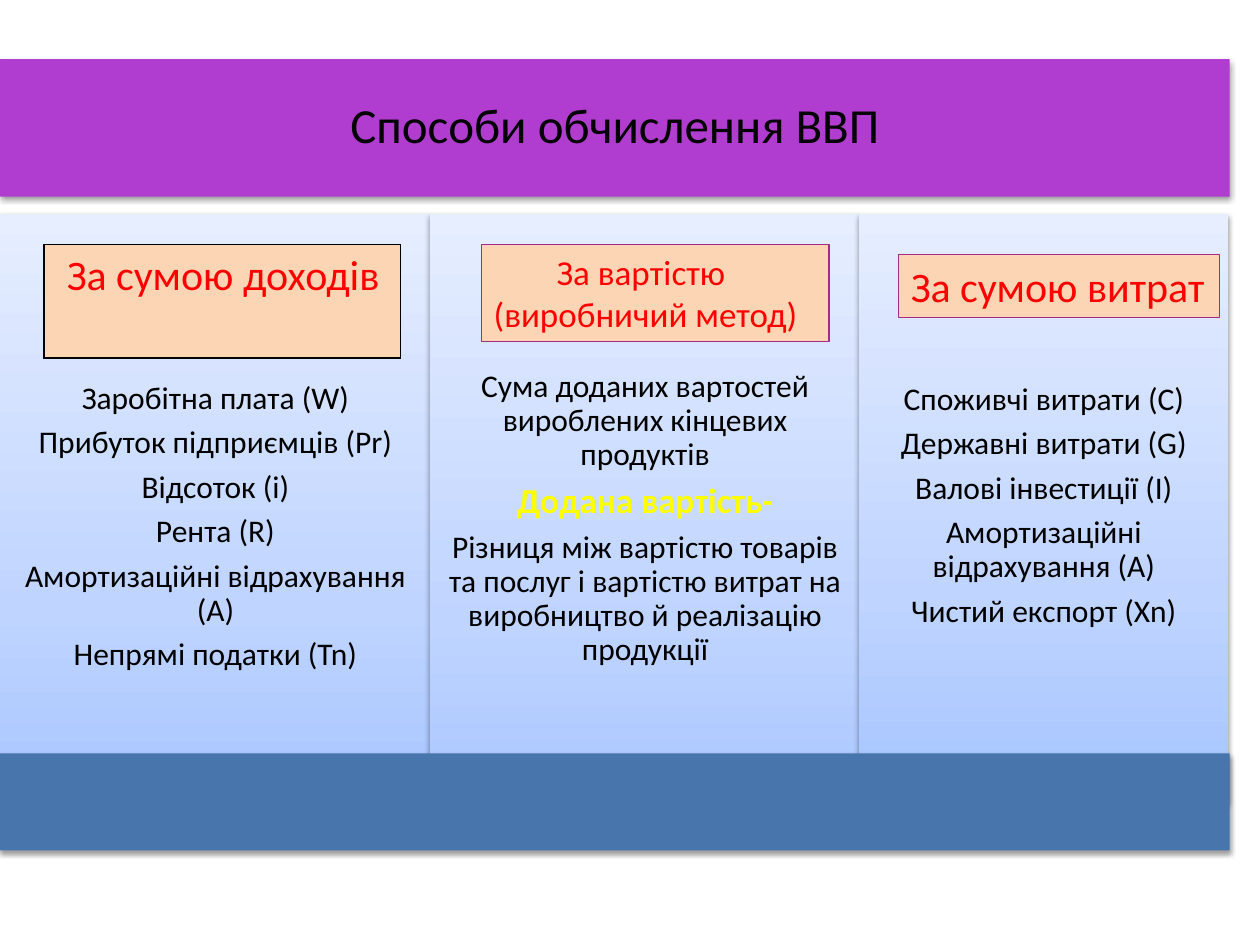
"""Build a slide comparing three ways of calculating GDP."""
import copy
from dataclasses import dataclass

import lxml.etree
import pptx
import pptx.dml.color
import pptx.enum.shapes
import pptx.enum.text
import pptx.oxml.ns
import pptx.util

Inches = pptx.util.Inches
Pt = pptx.util.Pt
RGBColor = pptx.dml.color.RGBColor
PP_ALIGN = pptx.enum.text.PP_ALIGN
ANCHOR = pptx.enum.text.MSO_ANCHOR
AUTO_SIZE = pptx.enum.text.MSO_AUTO_SIZE
RECT = pptx.enum.shapes.MSO_SHAPE.RECTANGLE
qn = pptx.oxml.ns.qn

PURPLE = RGBColor(0xB0, 0x3D, 0xCF)
BLUE = RGBColor(0x48, 0x75, 0xAC)
PEACH = RGBColor(0xFC, 0xD5, 0xB5)
PLUM = RGBColor(0xA5, 0x2B, 0x8B)
RED = RGBColor(0xFF, 0x00, 0x00)
YELLOW = RGBColor(0xFF, 0xFF, 0x00)
BLACK = RGBColor(0x00, 0x00, 0x00)
PANEL_STOPS = (
    (0, RGBColor(0xA4, 0xC4, 0xFF)),
    (0.35, RGBColor(0xBF, 0xD4, 0xFF)),
    (1, RGBColor(0xE6, 0xEE, 0xFF)),
)
KEY_TERM = "Додана вартість-"
BAND_WIDTH = 9.76
PANEL_TOP = 1.7


@dataclass
class Panel:
    left: float
    width: float
    height: float
    inset: float
    text_top: float
    lines: list[str]


@dataclass
class Heading:
    left: float
    top: float
    width: float
    height: float
    text: str
    size: int
    indent: float = 0


PANELS = [
    Panel(0, 3.42, 4.83, 0.1, 1.33, [
        "Заробітна плата (W)", "Прибуток підприємців (Pr)", "Відсоток (i)",
        "Рента (R)", "Амортизаційні відрахування (A)", "Непрямі податки (Tn)"]),
    Panel(3.41, 3.42, 4.98, 0.05, 1.24, [
        "Сума доданих вартостей вироблених кінцевих продуктів", KEY_TERM,
        "Різниця між вартістю товарів та послуг і вартістю витрат на "
        "виробництво й реалізацію продукції"]),
    Panel(6.82, 2.93, 4.67, 0.07, 1.34, [
        "Споживчі витрати (C)", "Державні витрати (G)", "Валові інвестиції (I)",
        "Амортизаційні відрахування (A)", "Чистий експорт (Xn)"]),
]
HEADINGS = [
    Heading(7.13, 2.02, 2.55, 0.5, "За сумою витрат", 24),
    Heading(3.82, 1.94, 2.76, 0.77, "За вартістю (виробничий метод)", 20, 0.5),
]


def place(sp, left: float, top: float, width: float, height: float) -> None:
    sp.left, sp.top = Inches(left), Inches(top)
    sp.width, sp.height = Inches(width), Inches(height)


def solid(fill, color: RGBColor) -> None:
    fill.solid()
    fill.fore_color.rgb = color


def style(p, size: int, color: RGBColor, bold: bool = False) -> None:
    for r in p.runs:
        r.font.name = "Calibri"
        r.font.size = Pt(size)
        r.font.color.rgb = color
        r.font.bold = bold


def set_margins(tf, inset: float) -> None:
    tf.margin_left = tf.margin_right = Inches(inset)
    tf.margin_top = tf.margin_bottom = Inches(inset)


def cast_shadow(sp) -> None:
    sp.shadow.inherit = False
    effects = sp._element.spPr.find(qn("a:effectLst"))
    shadow = lxml.etree.SubElement(
        effects, qn("a:outerShdw"), blurRad=str(Pt(3.1)), dist=str(Pt(1.6)),
        dir="5400000", rotWithShape="0")
    color = lxml.etree.SubElement(shadow, qn("a:srgbClr"), val="000000")
    lxml.etree.SubElement(color, qn("a:alpha"), val="38000")


def fill_gradient(sp) -> None:
    sp.fill.gradient()
    sp.fill.gradient_angle = 90
    stops = sp._element.spPr.find(qn("a:gradFill")).find(qn("a:gsLst"))
    stops.append(copy.deepcopy(stops[0]))
    for stop, (position, color) in zip(sp.fill.gradient_stops, PANEL_STOPS):
        stop.position = position
        stop.color.rgb = color


def draw_title(sp) -> None:
    place(sp, 0, 0.47, BAND_WIDTH, 1.09)
    solid(sp.fill, PURPLE)
    cast_shadow(sp)
    tf = sp.text_frame
    tf.text = "Способи обчислення ВВП"
    tf.auto_size = AUTO_SIZE.NONE
    tf.vertical_anchor = ANCHOR.MIDDLE
    set_margins(tf, 0.12)
    p = tf.paragraphs[0]
    p.alignment = PP_ALIGN.CENTER
    p.line_spacing = 0.9
    style(p, 28, BLACK)


def draw_panel(sp, panel: Panel) -> None:
    place(sp, panel.left, PANEL_TOP, panel.width, panel.height)
    fill_gradient(sp)
    cast_shadow(sp)
    tf = sp.text_frame
    tf.text = "\n".join(panel.lines)
    tf.auto_size = AUTO_SIZE.NONE
    tf.vertical_anchor = ANCHOR.TOP
    set_margins(tf, panel.inset)
    tf.margin_top = Inches(panel.text_top)
    for p in tf.paragraphs:
        pPr = p._p.get_or_add_pPr()
        pPr.set("marL", "0")
        pPr.set("indent", "0")
        lxml.etree.SubElement(pPr, qn("a:buNone"))
        p.alignment = PP_ALIGN.CENTER
        p.line_spacing = 0.9
        p.space_before = Pt(0)
        p.space_after = Pt(6)
        is_term = p.text == KEY_TERM
        style(p, 20 if is_term else 18, YELLOW if is_term else BLACK, is_term)


def draw_base(s) -> None:
    sp = s.shapes.add_shape(RECT, 0, Inches(5.98), Inches(BAND_WIDTH), Inches(0.77))
    solid(sp.fill, BLUE)
    sp.line.fill.background()
    cast_shadow(sp)


def draw_income_table(s) -> None:
    frame = s.shapes.add_table(1, 1, Inches(0.35), Inches(1.94), Inches(2.83), Inches(0.9))
    table = frame.table
    table.first_row = table.horz_banding = False
    cell = table.cell(0, 0)
    cell.text = "За сумою доходів"
    cell.margin_left = Inches(0.18)
    cell.margin_right = Inches(0.05)
    style(cell.text_frame.paragraphs[0], 24, RED)
    tcPr = cell._tc.get_or_add_tcPr()
    for side in ("a:lnL", "a:lnR", "a:lnT", "a:lnB"):
        ln = lxml.etree.SubElement(tcPr, qn(side), w=str(Pt(1)))
        fill = lxml.etree.SubElement(ln, qn("a:solidFill"))
        lxml.etree.SubElement(fill, qn("a:srgbClr"), val=str(BLACK))
    solid(cell.fill, PEACH)


def draw_heading(s, heading: Heading) -> None:
    sp = s.shapes.add_textbox(0, 0, 0, 0)
    place(sp, heading.left, heading.top, heading.width, heading.height)
    solid(sp.fill, PEACH)
    solid(sp.line.fill, PLUM)
    sp.line.width = Pt(0.75)
    tf = sp.text_frame
    tf.text = heading.text
    tf.word_wrap = True
    tf.auto_size = AUTO_SIZE.SHAPE_TO_FIT_TEXT
    p = tf.paragraphs[0]
    p._p.get_or_add_pPr().set("indent", str(Inches(heading.indent)))
    style(p, heading.size, RED)


def main() -> None:
    prs = pptx.Presentation()
    prs.slide_width, prs.slide_height = Inches(10), Inches(7.5)
    s = prs.slides.add_slide(prs.slide_layouts.get_by_name("Comparison"))
    title, *bodies, spare = list(s.placeholders)
    spare._element.getparent().remove(spare._element)
    draw_title(title)
    for sp, panel in zip(bodies, PANELS):
        draw_panel(sp, panel)
    draw_base(s)
    draw_income_table(s)
    for heading in HEADINGS:
        draw_heading(s, heading)
    prs.save("out.pptx")


if __name__ == "__main__":
    main()
